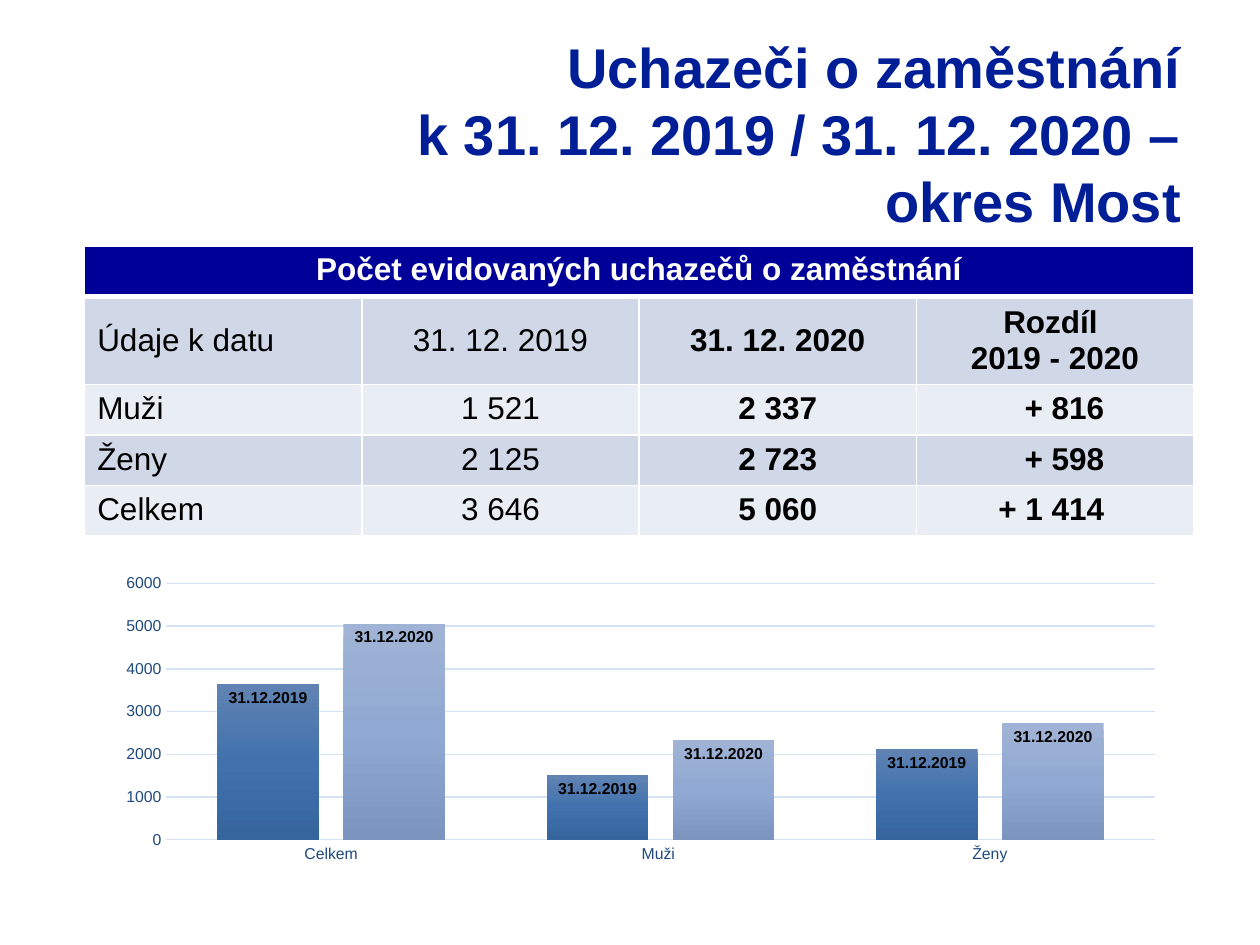
from lxml import etree
from pptx import Presentation
from pptx.chart.data import CategoryChartData
from pptx.dml.color import RGBColor
from pptx.enum.chart import XL_CHART_TYPE as ChartType
from pptx.enum.chart import XL_LABEL_POSITION as LabelPosition
from pptx.enum.chart import XL_TICK_MARK as TickMark
from pptx.enum.text import MSO_ANCHOR as Anchor
from pptx.enum.text import PP_ALIGN as Align
from pptx.oxml import parse_xml
from pptx.oxml.ns import nsdecls, qn
from pptx.util import Pt

FONT = "Arial"
BANDS = ("D0D8E8", "E9EDF4")
ROWS = [
    ("Údaje k datu", "31. 12. 2019", "31. 12. 2020", "Rozdíl \v2019 - 2020"),
    ("Muži", "1 521", "2 337", "+ 816"),
    ("Ženy", "2 125", "2 723", "+ 598"),
    ("Celkem", "3 646", "5 060", "+ 1 414"),
]
CATEGORIES = ["Celkem", "Muži ", "Ženy"]
SERIES = [
    ("31.12.2019", (3646, 1521, 2125), ("6183B3", "4172AD", "36659E")),
    ("31.12.2020", (5060, 2337, 2723), ("A0B3D5", "90A9D2", "7C95BE")),
]


def rgb(value):
    return RGBColor.from_string(value)


def set_font(font, size, color, bold=False):
    font.name = FONT
    font.size = Pt(size)
    font.bold = bold
    font.color.rgb = rgb(color)


def write(frame, text, size=18, color="000000", bold=False, align=Align.LEFT, level=0):
    """Fill a text frame, one paragraph per line of text."""
    for index, line in enumerate(text.split("\n")):
        paragraph = frame.add_paragraph() if index else frame.paragraphs[0]
        paragraph.text = line
        paragraph.alignment = align
        paragraph.level = level
        set_font(paragraph.font, size, color, bold)


def set_borders(cell, top=1, bottom=1):
    properties = cell._tc.get_or_add_tcPr()
    for side, width in (("L", 1), ("R", 1), ("T", top), ("B", bottom)):
        line = etree.SubElement(properties, qn(f"a:ln{side}"), w=str(Pt(width)))
        fill = etree.SubElement(line, qn("a:solidFill"))
        etree.SubElement(fill, qn("a:srgbClr"), val="FFFFFF")


def fill_cell(cell, color):
    cell.fill.solid()
    cell.fill.fore_color.rgb = rgb(color)


def fill_gradient(fill_format, colors):
    """Fill a chart format from top to bottom with evenly spaced colours."""
    step = 100000 // (len(colors) - 1)
    stops = "".join(
        f'<a:gs pos="{index * step}"><a:srgbClr val="{color}"/></a:gs>'
        for index, color in enumerate(colors)
    )
    fill_format.fill.gradient()
    properties = fill_format._element.get_or_add_spPr()
    properties.replace(properties.find(qn("a:gradFill")), parse_xml(
        f'<a:gradFill {nsdecls("a")} rotWithShape="1"><a:gsLst>{stops}</a:gsLst>'
        '<a:lin ang="5400000" scaled="0"/></a:gradFill>'
    ))


def add_title(slide):
    box = slide.shapes.add_textbox(Pt(160.5), Pt(15), Pt(521.5), Pt(108))
    box.text_frame.word_wrap = True
    write(box.text_frame, "Uchazeči o zaměstnání\nk 31. 12. 2019 / 31. 12. 2020 – okres Most",
          size=32, color="001E96", bold=True, align=Align.RIGHT)


def add_counts_table(slide):
    table = slide.shapes.add_table(len(ROWS) + 1, 4, Pt(48.4), Pt(140.6),
                                   Pt(633.6), Pt(157.8)).table
    table.first_row = False
    table.horz_banding = False
    for index, row in enumerate(table.rows):
        row.height = Pt(48.2 if index == 1 else 27.4)

    for column in range(4):
        cell = table.cell(0, column)
        set_borders(cell, bottom=3)
        fill_cell(cell, "000099")
    header = table.cell(0, 0)
    header.merge(table.cell(0, 3))
    write(header.text_frame, "Počet evidovaných uchazečů o zaměstnání",
          color="FFFFFF", bold=True, align=Align.CENTER)

    for row, texts in enumerate(ROWS, start=1):
        for column, text in enumerate(texts):
            cell = table.cell(row, column)
            set_borders(cell, top=3 if row == 1 else 1)
            fill_cell(cell, BANDS[(row - 1) % 2])
            difference = row > 1 and column == 3
            align = Align.CENTER if column else Align.LEFT
            if row == 1:
                cell.vertical_anchor = Anchor.MIDDLE
            if difference:
                cell.margin_right = Pt(51)
                align = Align.RIGHT
            write(cell.text_frame, text, bold=column >= 2, align=align,
                  level=1 if difference else 0)


def style_axis(axis):
    axis.major_tick_mark = TickMark.NONE
    axis.minor_tick_mark = TickMark.NONE
    set_font(axis.tick_labels.font, 9, "1F497D")


def style_line(line):
    line.color.rgb = rgb("D4E3F4")
    line.width = Pt(0.75)


def add_counts_chart(slide):
    data = CategoryChartData()
    data.categories = CATEGORIES
    for number, (_, values, _) in enumerate(SERIES, start=1):
        data.add_series(f"Series {number}", values)
    chart = slide.shapes.add_chart(ChartType.COLUMN_CLUSTERED, Pt(60), Pt(324.7),
                                   Pt(612), Pt(172), data).chart
    chart.has_legend = False
    chart.has_title = False
    set_font(chart.font, 10, "000000")

    style_axis(chart.category_axis)
    style_line(chart.category_axis.format.line)
    value_axis = chart.value_axis
    style_axis(value_axis)
    value_axis.format.line.fill.background()
    style_line(value_axis.major_gridlines.format.line)
    value_axis.minimum_scale = 0
    value_axis.maximum_scale = 6000
    value_axis.major_unit = 1000

    plot = chart.plots[0]
    plot.gap_width = 100
    plot.overlap = -24
    plot.vary_by_categories = False
    for series, (date, values, colors) in zip(plot.series, SERIES):
        fill_gradient(series.format, colors)
        labels = series.data_labels
        labels.show_value = True
        labels.position = LabelPosition.INSIDE_END
        set_font(labels.font, 9, "1F497D")
        for index in range(len(values)):
            label = series.points[index].data_label
            write(label.text_frame, date, size=9, bold=True, align=Align.CENTER)
            set_font(label.text_frame.paragraphs[0].runs[0].font, 9, "000000", bold=True)
            label.position = LabelPosition.INSIDE_END


def main():
    presentation = Presentation()
    presentation.slide_width = Pt(720)
    presentation.slide_height = Pt(540)
    slide = presentation.slides.add_slide(presentation.slide_layouts[6])
    add_title(slide)
    add_counts_table(slide)
    add_counts_chart(slide)
    presentation.save("out.pptx")


if __name__ == "__main__":
    main()
